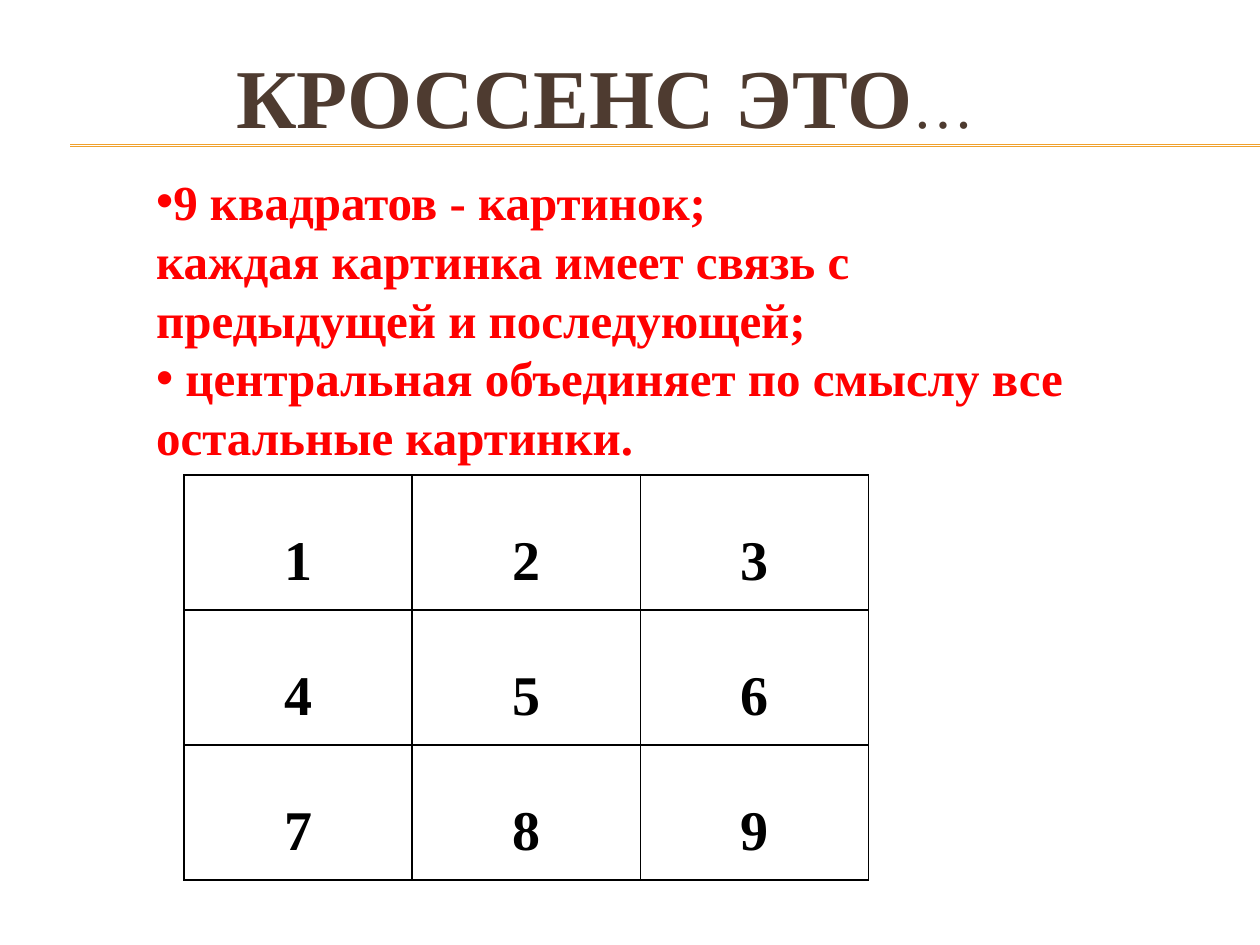
from dataclasses import dataclass

from lxml.etree import SubElement
from pptx import Presentation
from pptx.dml.color import RGBColor
from pptx.enum.shapes import MSO_CONNECTOR
from pptx.enum.text import MSO_ANCHOR, MSO_AUTO_SIZE, PP_ALIGN
from pptx.oxml.ns import qn
from pptx.util import Cm, Pt

FONT = "Times New Roman"
BROWN, RED, BLACK, GOLD = "4E3B30", "FF0000", "000000", "F0A22E"


@dataclass
class Rule:
    y: float
    left: float = 1.42
    right: float = 25.4


@dataclass
class Item:
    text: str
    bulleted: bool = True


RULES = [Rule(2.92), Rule(2.95)]
ITEMS = [
    Item("9 квадратов - картинок;"),
    Item("каждая картинка имеет связь с предыдущей и последующей;", False),
    Item(" центральная объединяет по смыслу все остальные картинки."),
]
GRID_SIZE = 3


def rgb(color: str) -> RGBColor:
    return RGBColor.from_string(color)


def add_text(p, text: str, *, size: float, color: str, bold: bool = True, align=PP_ALIGN.LEFT) -> None:
    p.alignment = align
    r = p.add_run()
    r.text = text
    r.font.name = FONT
    r.font.size = Pt(size)
    r.font.bold = bold
    r.font.color.rgb = rgb(color)


def add_bullet(p) -> None:
    pPr = p._p.get_or_add_pPr()
    pPr.set("marL", "0")
    pPr.set("indent", "0")
    SubElement(pPr, qn("a:buFont"), typeface="Arial")
    SubElement(pPr, qn("a:buChar"), char="•")


def add_rule(s, rule: Rule) -> None:
    line = s.shapes.add_connector(
        MSO_CONNECTOR.STRAIGHT, Cm(rule.left), Cm(rule.y), Cm(rule.right), Cm(rule.y)
    )
    line.line.color.rgb = rgb(GOLD)
    line.line.width = Pt(0.75)
    SubElement(line._element.spPr, qn("a:effectLst"))


def set_title(s) -> None:
    sp = s.shapes.title
    sp.left, sp.top, sp.width, sp.height = Cm(0.89), Cm(0.74), Cm(22.61), Cm(2.34)
    tf = sp.text_frame
    tf.auto_size = MSO_AUTO_SIZE.NONE
    tf.vertical_anchor = MSO_ANCHOR.MIDDLE
    p = tf.paragraphs[0]
    add_text(p, "КРОССЕНС ЭТО", size=47.8, color=BROWN, align=PP_ALIGN.CENTER)
    add_text(p, "…", size=35.1, color=BROWN, bold=False, align=PP_ALIGN.CENTER)


def add_items(s, items: list[Item]) -> None:
    sp = s.shapes.add_textbox(Cm(2.9), Cm(3.33), Cm(18.8), Cm(6.25))
    tf = sp.text_frame
    tf.word_wrap = True
    for i, item in enumerate(items):
        p = tf.add_paragraph() if i else tf.paragraphs[0]
        add_text(p, item.text, size=28, color=RED)
        if item.bulleted:
            add_bullet(p)


def set_borders(cell, color: str, width: float) -> None:
    tcPr = cell._tc.get_or_add_tcPr()
    for side in ("lnL", "lnR", "lnT", "lnB"):
        ln = SubElement(tcPr, qn(f"a:{side}"), w=str(Pt(width)))
        fill = SubElement(ln, qn("a:solidFill"))
        SubElement(fill, qn("a:srgbClr"), val=color)


def add_grid(s, size: int) -> None:
    col_width, row_height = Cm(4.6), Cm(2.72)
    table = s.shapes.add_table(
        size, size, Cm(3.71), Cm(9.58), col_width * size, row_height * size
    ).table
    table.first_row = False
    table.horz_banding = False
    for col in table.columns:
        col.width = col_width
    for row in table.rows:
        row.height = row_height
    for number, cell in enumerate(table.iter_cells(), start=1):
        cell.margin_left = cell.margin_right = Cm(0.18)
        cell.margin_top, cell.margin_bottom = Cm(1.11), 0
        set_borders(cell, BLACK, 1)
        cell.fill.background()
        add_text(
            cell.text_frame.paragraphs[0], str(number), size=32, color=BLACK, align=PP_ALIGN.CENTER
        )


def main() -> None:
    prs = Presentation()
    prs.slide_width, prs.slide_height = Cm(25.4), Cm(19.05)
    s = prs.slides.add_slide(prs.slide_layouts[5])
    for rule in RULES:
        add_rule(s, rule)
    set_title(s)
    add_items(s, ITEMS)
    add_grid(s, GRID_SIZE)
    prs.save("out.pptx")


if __name__ == "__main__":
    main()
